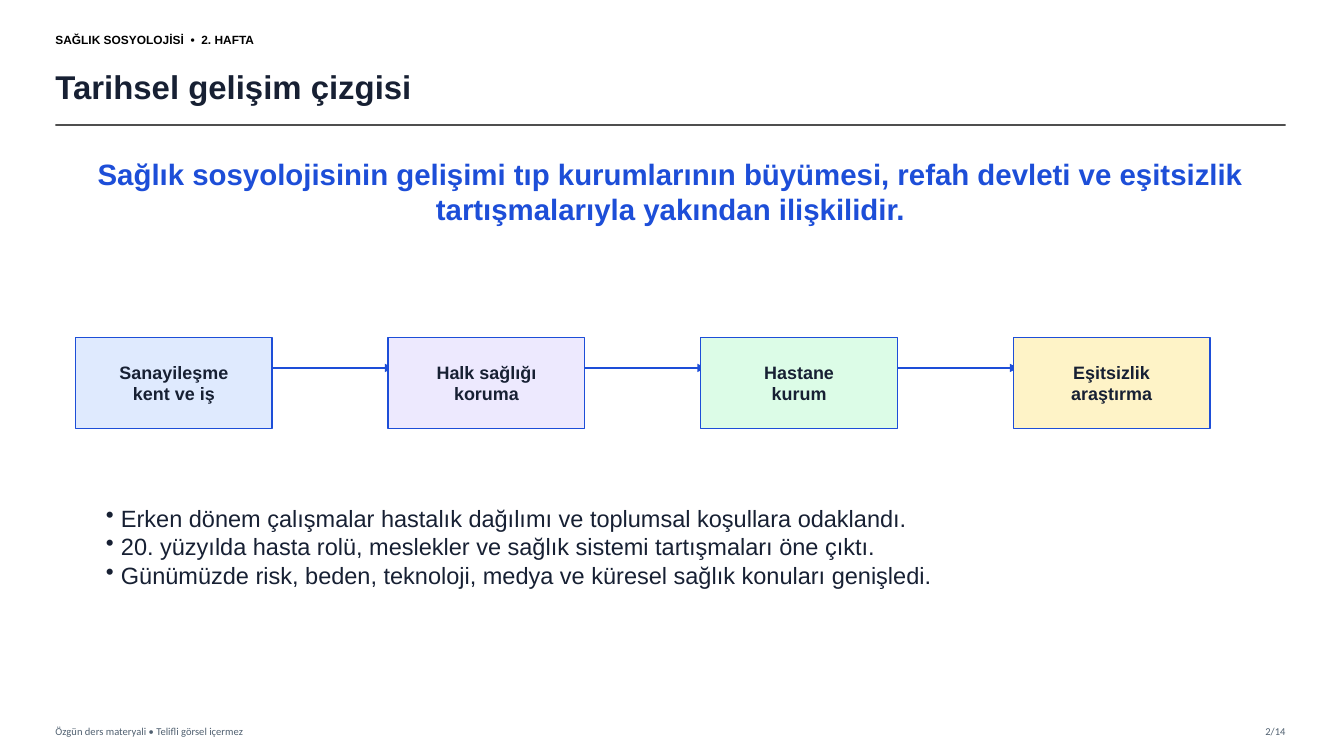
from lxml.etree import SubElement
from pptx import Presentation
from pptx.dml.color import RGBColor
from pptx.enum.shapes import MSO_CONNECTOR, MSO_SHAPE
from pptx.enum.text import MSO_ANCHOR, MSO_AUTO_SIZE, PP_ALIGN
from pptx.oxml.ns import qn
from pptx.util import Pt

PX = 9144  # one px is a hundredth of an inch

WHITE = RGBColor(0xFF, 0xFF, 0xFF)
BLACK = RGBColor(0x00, 0x00, 0x00)
INK = RGBColor(0x17, 0x20, 0x33)
BLUE = RGBColor(0x1D, 0x4E, 0xD8)
SLATE = RGBColor(0x50, 0x60, 0x70)
RULE_GREY = RGBColor(0x33, 0x33, 0x33)
PALE_BLUE = RGBColor(0xDF, 0xEA, 0xFE)
PALE_VIOLET = RGBColor(0xED, 0xE9, 0xFE)
PALE_GREEN = RGBColor(0xDC, 0xFC, 0xE7)
PALE_YELLOW = RGBColor(0xFE, 0xF3, 0xC7)

# Text styles: font attributes and colour
COURSE = {"name": "Arial", "size": Pt(8.5), "bold": True}, BLACK
HEADING = {"name": "Arial", "size": Pt(23.5), "bold": True}, INK
CLAIM = {"name": "Arial", "size": Pt(21), "bold": True}, BLUE
STAGE = {"name": "Arial", "size": Pt(12.8), "bold": True}, INK
POINT = {"name": "Arial", "size": Pt(16.8), "bold": False}, INK
FOOTER = {"name": "Calibri", "size": Pt(7.5), "bold": False}, SLATE

FRAME = {
    "margin_left": 0, "margin_top": 0, "margin_right": 0, "margin_bottom": 0,
    "word_wrap": True, "auto_size": MSO_AUTO_SIZE.NONE,
}

STAGES = [
    (("Sanayileşme", "kent ve iş"), PALE_BLUE),
    (("Halk sağlığı", "koruma"), PALE_VIOLET),
    (("Hastane", "kurum"), PALE_GREEN),
    (("Eşitsizlik", "araştırma"), PALE_YELLOW),
]
STAGE_LEFT, STAGE_TOP, STAGE_WIDTH, STAGE_HEIGHT, STAGE_STEP = 75, 335, 195, 90, 310
ARROW_Y, ARROW_INSET, ARROW_LENGTH = 365, 180, 135

POINTS = [
    "Erken dönem çalışmalar hastalık dağılımı ve toplumsal koşullara odaklandı.",
    "20. yüzyılda hasta rolü, meslekler ve sağlık sistemi tartışmaları öne çıktı.",
    "Günümüzde risk, beden, teknoloji, medya ve küresel sağlık konuları genişledi.",
]
BULLET_INDENT = 15


def emu(*lengths):
    return [length * PX for length in lengths]


def set_all(target, values):
    for key, value in values.items():
        setattr(target, key, value)


def add_bullet(paragraph):
    properties = paragraph._p.get_or_add_pPr()
    properties.set("marL", str(BULLET_INDENT * PX))
    properties.set("indent", str(-BULLET_INDENT * PX))
    SubElement(properties, qn("a:buChar")).set("char", "•")


def write(holder, lines, style, align=PP_ALIGN.LEFT, anchor=MSO_ANCHOR.MIDDLE, bullets=False):
    frame = holder.text_frame
    set_all(frame, {**FRAME, "vertical_anchor": anchor})
    frame.text = "\n".join(lines)
    font_values, colour = style
    for paragraph in frame.paragraphs:
        paragraph.alignment = align
        if bullets:
            add_bullet(paragraph)
        for run in paragraph.runs:
            set_all(run.font, font_values)
            run.font.color.rgb = colour


def add_text(slide, box, lines, style, **layout):
    write(slide.shapes.add_textbox(*emu(*box)), lines, style, **layout)


def place_title(slide, box, text):
    title = slide.shapes.title
    set_all(title, dict(zip(("left", "top", "width", "height"), emu(*box))))
    write(title, [text], HEADING)


def add_line(slide, left, right, y, colour, weight):
    line = slide.shapes.add_connector(MSO_CONNECTOR.STRAIGHT, *emu(left, y, right, y))
    line.line.color.rgb = colour
    line.line.width = Pt(weight)
    SubElement(line._element.spPr, qn("a:effectLst"))
    return line


def add_rule(slide):
    rule = add_line(slide, 55, 1275, 124, RULE_GREY, 1.2)
    colour = rule.line._ln.find(".//" + qn("a:srgbClr"))
    SubElement(colour, qn("a:alpha")).set("val", "85000")


def add_arrow(slide, left):
    arrow = add_line(slide, left, left + ARROW_LENGTH, ARROW_Y, BLUE, 2)
    SubElement(arrow.line._ln, qn("a:tailEnd")).set("type", "triangle")


def add_stage(slide, left, lines, fill):
    stage = slide.shapes.add_shape(
        MSO_SHAPE.RECTANGLE, *emu(left, STAGE_TOP, STAGE_WIDTH, STAGE_HEIGHT))
    stage.shadow.inherit = False
    stage.fill.solid()
    stage.fill.fore_color.rgb = fill
    stage.line.color.rgb = BLUE
    stage.line.width = Pt(1)
    write(stage, lines, STAGE, align=PP_ALIGN.CENTER)


def add_timeline(slide):
    lefts = [STAGE_LEFT + i * STAGE_STEP for i in range(len(STAGES))]
    # Arrows lie behind the stages, which cover their ends
    for left in lefts[:-1]:
        add_arrow(slide, left + ARROW_INSET)
    for left, (lines, fill) in zip(lefts, STAGES):
        add_stage(slide, left, lines, fill)


def main():
    deck = Presentation()
    deck.slide_width, deck.slide_height = emu(1333, 750)
    slide = deck.slides.add_slide(deck.slide_layouts[5])
    slide.background.fill.solid()
    slide.background.fill.fore_color.rgb = WHITE

    # Header
    add_text(slide, (55, 25, 360, 28), ["SAĞLIK SOSYOLOJİSİ  •  2. HAFTA"], COURSE)
    place_title(slide, (55, 58, 1195, 55), "Tarihsel gelişim çizgisi")
    add_rule(slide)

    # Main claim
    claim = ("Sağlık sosyolojisinin gelişimi tıp kurumlarının büyümesi, refah devleti "
             "ve eşitsizlik tartışmalarıyla yakından ilişkilidir.")
    add_text(slide, (80, 155, 1170, 105), [claim], CLAIM,
             align=PP_ALIGN.CENTER, anchor=MSO_ANCHOR.TOP)

    # Historical stages and key points
    add_timeline(slide)
    add_text(slide, (105, 500, 1100, 125), POINTS, POINT, anchor=MSO_ANCHOR.TOP, bullets=True)

    # Footer
    add_text(slide, (55, 714, 600, 22), ["Özgün ders materyali • Telifli görsel içermez"], FOOTER)
    add_text(slide, (1210, 714, 65, 22), ["2/14"], FOOTER, align=PP_ALIGN.RIGHT)

    deck.save("out.pptx")


if __name__ == "__main__":
    main()
